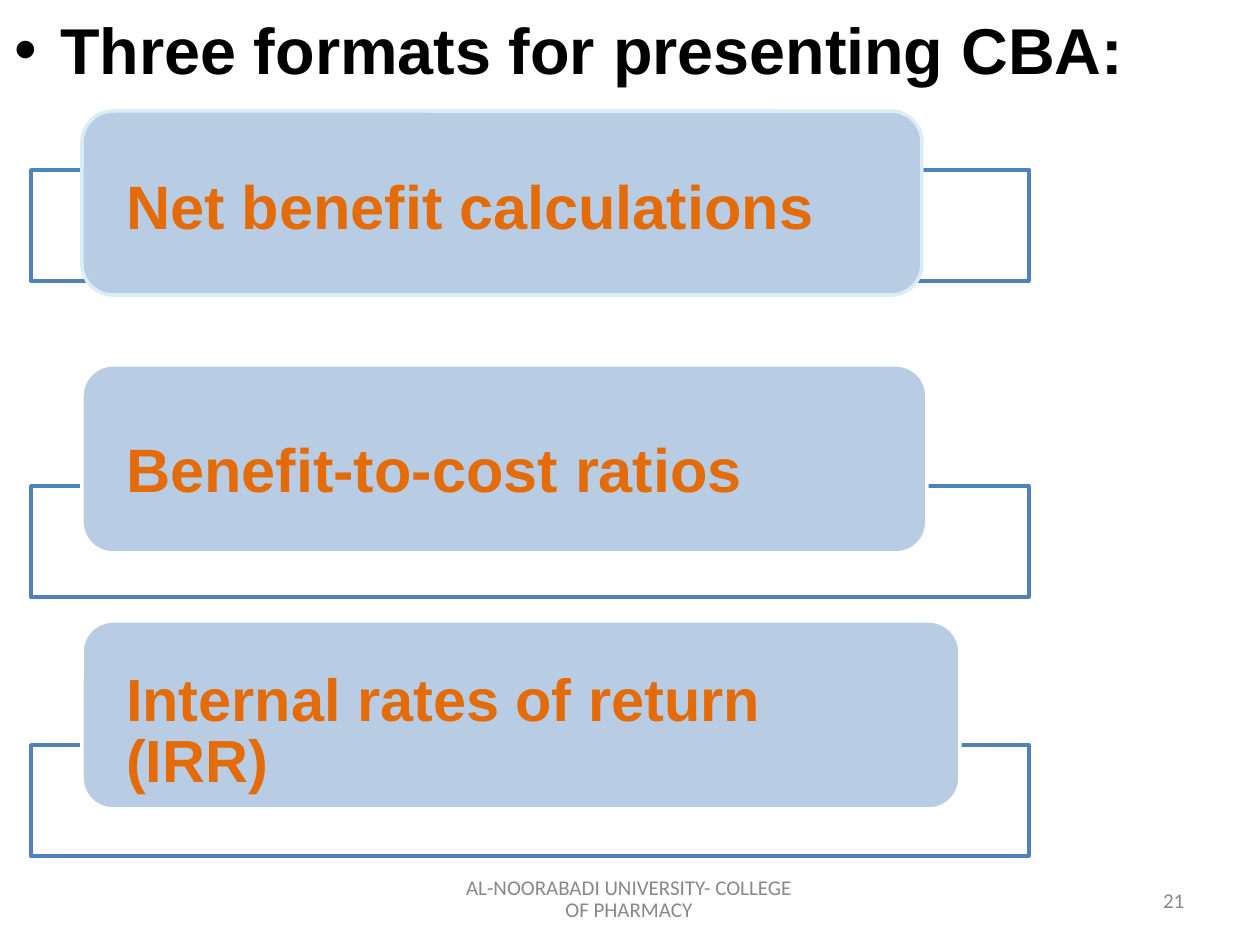
from lxml.etree import SubElement
from pptx import Presentation
from pptx.dml.color import RGBColor
from pptx.enum.shapes import MSO_SHAPE as Preset
from pptx.enum.text import MSO_ANCHOR as Anchor, PP_ALIGN as Align
from pptx.oxml.ns import qn
from pptx.util import Pt

PX = 914400 / 126
BLACK = RGBColor(0x00, 0x00, 0x00)
WHITE = RGBColor(0xFF, 0xFF, 0xFF)
GREY = RGBColor(0x88, 0x88, 0x88)
ORANGE = RGBColor(0xE3, 0x6C, 0x09)
BLUE = RGBColor(0x4F, 0x81, 0xBC)
PALE_BLUE = RGBColor(0xB8, 0xCD, 0xE4)
ICE = RGBColor(0xDB, 0xED, 0xF4)

TITLE = {"size": Pt(37), "name": "Arial", "bold": True}
LABEL = {"size": Pt(35), "name": "Arial", "bold": True}
LONG_LABEL = LABEL | {"size": Pt(34)}
FOOTER = {"size": Pt(12), "name": "Calibri"}

FORMATS = [
    ("Net benefit calculations", LABEL, None, 170, (111, 840, 184), 4, ICE),
    ("Benefit-to-cost ratios", LABEL, None, 486, (365, 845, 188), 18, WHITE),
    ("Internal rates of return (IRR)", LONG_LABEL, Pt(35.2), 745, (621, 878, 188), 36, WHITE),
]


def emu(*lengths):
    """Turn px lengths into EMU."""
    return [round(length * PX) for length in lengths]


def write(shape, text, font, colour, insets=(0, 0, 0, 0), anchor=Anchor.TOP,
          align=Align.LEFT, spacing=None):
    """Put one formatted paragraph into a shape and return it."""
    frame = shape.text_frame
    frame.word_wrap = True
    frame.vertical_anchor = anchor
    for side, inset in zip(("left", "top", "right", "bottom"), emu(*insets)):
        setattr(frame, f"margin_{side}", inset)
    para = frame.paragraphs[0]
    para.alignment = align
    para.line_spacing = spacing
    span = para.add_run()
    span.text = text
    for key, value in font.items():
        setattr(span.font, key, value)
    span.font.color.rgb = colour
    return para


def add_text(page, place, text, font, colour, **layout):
    """Add a text box with one paragraph."""
    box = page.shapes.add_textbox(*emu(*place))
    return write(box, text, font, colour, **layout)


def add_bullet(para, margin, hanging):
    """Give a paragraph a hanging round bullet."""
    props = para._p.get_or_add_pPr()
    left, indent = emu(margin, -hanging)
    props.set("marL", str(left))
    props.set("indent", str(indent))
    SubElement(props, qn("a:buFont"), typeface="Arial")
    SubElement(props, qn("a:buChar"), char="•")


def add_panel(page, preset, place, line, fill=None):
    """Add an outlined shape, filled when a colour is given."""
    panel = page.shapes.add_shape(preset, *emu(*place))
    panel.shadow.inherit = False
    panel.line.color.rgb = line
    panel.line.width = Pt(2)
    if fill is None:
        panel.fill.background()
    else:
        panel.fill.solid()
        panel.fill.fore_color.rgb = fill
    return panel


def add_format(page, text, font, spacing, frame_top, card_place, inset, edge):
    """Add a frame with a rounded label card over it."""
    top, width, height = card_place
    add_panel(page, Preset.RECTANGLE, (31, frame_top, 998, 111), BLUE)
    card = add_panel(page, Preset.ROUNDED_RECTANGLE, (82, top, width, height), edge, PALE_BLUE)
    card.adjustments[0] = 31 / height
    write(card, text, font, ORANGE, insets=(35, inset, 90, 0),
          anchor=Anchor.MIDDLE, spacing=spacing)


def main():
    """Build the slide and save it."""
    deck = Presentation()
    deck.slide_width, deck.slide_height = emu(1260, 945)
    page = deck.slides.add_slide(deck.slide_layouts[6])
    for item in FORMATS:
        add_format(page, *item)
    title = add_text(page, (11, 10, 1140, 75), "Three formats for presenting CBA:", TITLE, BLACK)
    add_bullet(title, 49, 46)
    add_text(page, (462, 878, 334, 50), "AL-NOORABADI UNIVERSITY- COLLEGE OF PHARMACY",
             FOOTER, GREY, align=Align.CENTER, spacing=Pt(12.4))
    add_text(page, (1158, 891, 34, 25), "21", FOOTER, GREY, insets=(5, 0, 0, 0), spacing=Pt(12.4))
    deck.save("out.pptx")


if __name__ == "__main__":
    main()
